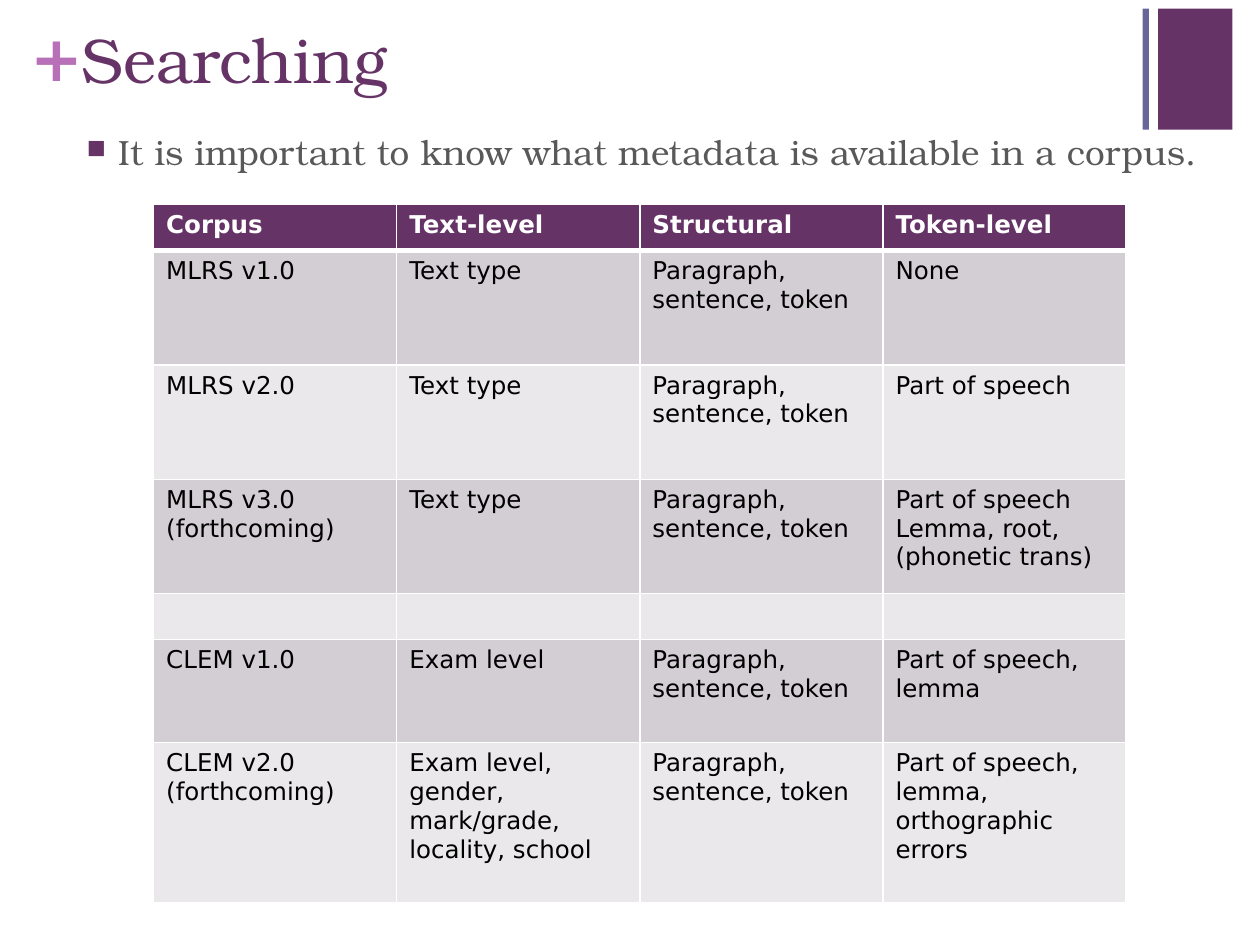
from lxml import etree
from pptx import Presentation
from pptx.dml.color import RGBColor as RGB
from pptx.enum.shapes import MSO_SHAPE as SHAPE
from pptx.enum.text import MSO_ANCHOR as ANCHOR, PP_ALIGN as ALIGN
from pptx.oxml.ns import qn
from pptx.util import Pt

COLORS = {"plum": "663366", "orchid": "B870B8", "slate": "666699", "gray": "595959",
          "white": "FFFFFF", "black": "000000", "band_dark": "D3CED3", "band_light": "EAE8EA"}
SANS, SERIF = "DejaVu Sans", "TeX Gyre Bonum"

HEADINGS = ["Corpus", "Text-level", "Structural", "Token-level"]
UNITS = "Paragraph, sentence, token"
CORPORA = [
    ["MLRS v1.0", "Text type", UNITS, "None"],
    ["MLRS v2.0", "Text type", UNITS, "Part of speech"],
    ["MLRS v3.0 (forthcoming)", "Text type", UNITS,
     "Part of speech\nLemma, root, (phonetic trans)"],
    [""] * 4,
    ["CLEM v1.0", "Exam level", UNITS, "Part of speech, lemma"],
    ["CLEM v2.0 (forthcoming)", "Exam level, gender, mark/grade, locality, school", UNITS,
     "Part of speech, lemma, orthographic errors"],
]
ROW_HEIGHTS = [26.4, 65.3, 65.3, 65.3, 26.4, 58.8, 91.5]


def style(font, name, size, color, bold=False):
    for attribute, value in {"name": name, "size": Pt(size), "bold": bold}.items():
        setattr(font, attribute, value)
    font.color.rgb = RGB.from_string(COLORS[color])


def add_text(slide, box, text, font, inset=None):
    frame = slide.shapes.add_textbox(*map(Pt, box)).text_frame
    frame.word_wrap = True
    frame.vertical_anchor = ANCHOR.TOP
    if inset is not None:
        for side in ("left", "top", "right", "bottom"):
            setattr(frame, f"margin_{side}", Pt(inset))
    line = frame.paragraphs[0]
    line.alignment = ALIGN.LEFT
    run = line.add_run()
    run.text = text
    style(run.font, *font)
    return line


def add_corner(slide, left, top, width, height):
    """Wide block at the right of the box, thin stripe at its left."""
    block, stripe = 42.5, 3.6
    for x, w, color in ((left + width - block, block, "plum"), (left, stripe, "slate")):
        bar = slide.shapes.add_shape(SHAPE.RECTANGLE, Pt(x), Pt(top), Pt(w), Pt(height))
        bar.shadow.inherit = False
        bar.fill.solid()
        bar.fill.fore_color.rgb = RGB.from_string(COLORS[color])
        bar.line.fill.background()


def add_title(slide, left, top, width, height):
    plus_width = 22.3
    add_text(slide, (left, top + 2.9, plus_width - 1.4, 43.9), "+",
             (SANS, 36, "orchid", True), inset=0)
    add_text(slide, (left + plus_width, top, width - plus_width, height), "Searching",
             (SERIF, 36, "plum"))


def add_statement(slide, left, top, width, height):
    line = add_text(slide, (left, top, width, height),
                    "It is important to know what metadata is available in a corpus.",
                    (SERIF, 20, "gray"))
    line.space_before = Pt(20)
    # Square bullet with a hanging indent
    properties = line._p.get_or_add_pPr()
    properties.set("marL", str(Pt(18)))
    properties.set("indent", str(-Pt(18)))
    bullet_color = etree.SubElement(properties, qn("a:buClr"))
    etree.SubElement(bullet_color, qn("a:srgbClr"), val=COLORS["plum"])
    etree.SubElement(properties, qn("a:buSzPct"), val="75000")
    etree.SubElement(properties, qn("a:buChar"), char="■")


def set_borders(cell, widths):
    properties = cell._tc.get_or_add_tcPr()
    for index, (side, width) in enumerate(widths.items()):
        border = etree.Element(qn(f"a:ln{side}"), w=str(Pt(width)))
        fill = etree.SubElement(border, qn("a:solidFill"))
        etree.SubElement(fill, qn("a:srgbClr"), val=COLORS["white"])
        properties.insert(index, border)


def fill_cell(cell, text, fill, color, bold):
    cell.text = text
    cell.fill.solid()
    cell.fill.fore_color.rgb = RGB.from_string(COLORS[fill])
    for line in cell.text_frame.paragraphs:
        for run in line.runs:
            style(run.font, SANS, 14, color, bold)
        if not line.runs:
            etree.SubElement(line._p, qn("a:endParaRPr"), sz="1400")


def add_corpus_table(slide, left, top, width, height):
    rows = [HEADINGS] + CORPORA
    table = slide.shapes.add_table(len(rows), len(HEADINGS),
                                   *map(Pt, (left, top, width, height))).table
    for column in table.columns:
        column.width = Pt(width / len(HEADINGS))
    for r, texts in enumerate(rows):
        table.rows[r].height = Pt(ROW_HEIGHTS[r])
        header = r == 0
        fill = "plum" if header else "band_dark" if r % 2 else "band_light"
        borders = {"L": 1, "R": 1, "T": 3 if r == 1 else 1, "B": 3 if header else 1}
        for c, text in enumerate(texts):
            cell = table.cell(r, c)
            fill_cell(cell, text, fill, "white" if header else "black", header)
            set_borders(cell, borders)


def main():
    deck = Presentation()
    deck.slide_width, deck.slide_height = Pt(720), Pt(540)
    slide = deck.slides.add_slide(deck.slide_layouts[6])
    add_corner(slide, 653, 5, 51.3, 69.1)
    add_title(slide, 17.3, 7.9, 635.7, 66.2)
    add_statement(slide, 42.5, 71.3, 665.3, 39.6)
    add_corpus_table(slide, 87.8, 116.9, 555.8, sum(ROW_HEIGHTS))
    deck.save("out.pptx")


if __name__ == "__main__":
    main()
